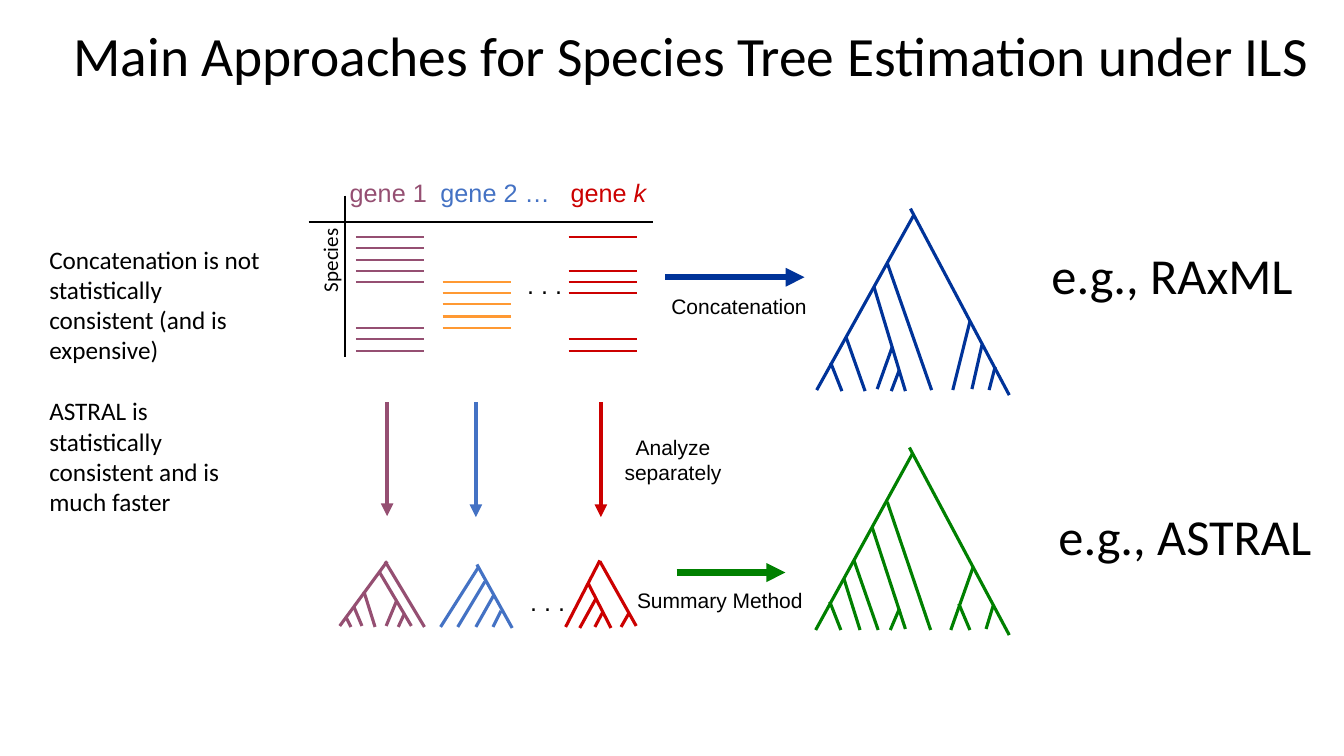
from dataclasses import dataclass

import pptx
import pptx.dml.color
import pptx.enum.shapes
import pptx.enum.text
import pptx.oxml.ns
import pptx.slide
import pptx.text.text
import pptx.util
from lxml import etree

EMU_PER_PX = 9144  # 100 px to the inch
COLORS = {
    "black": "000000",
    "purple": "954F72",
    "blue": "4472C4",
    "red": "CC0000",
    "orange": "FF9933",
    "navy": "003399",
    "green": "008000",
}
ALIGN = pptx.enum.text.PP_ALIGN
ANCHOR = pptx.enum.text.MSO_ANCHOR
Segment = tuple[int, int, int, int]


@dataclass
class Line:
    ends: Segment
    color: str
    width: float
    arrow: bool = False


@dataclass
class Tree:
    color: str
    branches: list[Segment]


@dataclass
class Alignment:
    left: int
    color: str
    rows: list[int]


@dataclass
class Label:
    box: Segment
    paragraphs: list[str]
    size: float
    font: str = "Calibri"
    align: ALIGN = ALIGN.LEFT
    anchor: ANCHOR = ANCHOR.TOP
    wrap: bool = False
    rotation: int = 0
    line_spacing: float = 1.0
    gap: int = 0


def px(length: int) -> pptx.util.Emu:
    return pptx.util.Emu(length * EMU_PER_PX)


def rgb(name: str) -> pptx.dml.color.RGBColor:
    return pptx.dml.color.RGBColor.from_string(COLORS[name])


def add_line(slide: pptx.slide.Slide, line: Line) -> None:
    straight = pptx.enum.shapes.MSO_CONNECTOR.STRAIGHT
    sp = slide.shapes.add_connector(straight, *map(px, line.ends))
    sp.line.color.rgb = rgb(line.color)
    sp.line.width = pptx.util.Pt(line.width)
    if line.arrow:
        ln = sp.line._get_or_add_ln()
        etree.SubElement(ln, pptx.oxml.ns.qn("a:tailEnd"), type="triangle")
    etree.SubElement(sp._element.spPr, pptx.oxml.ns.qn("a:effectLst"))


def add_tree(slide: pptx.slide.Slide, tree: Tree) -> None:
    for branch in tree.branches:
        add_line(slide, Line(branch, tree.color, 2.25))


def add_alignment(slide: pptx.slide.Slide, gene: Alignment) -> None:
    for row in gene.rows:
        y = round(235 + 11.25 * row)
        add_line(slide, Line((gene.left, y, gene.left + 68, y), gene.color, 1.5))


def add_label(slide: pptx.slide.Slide, label: Label) -> pptx.text.text.TextFrame:
    sp = slide.shapes.add_textbox(*map(px, label.box))
    sp.rotation = label.rotation
    tf = sp.text_frame
    tf.word_wrap = label.wrap
    tf.vertical_anchor = label.anchor
    for i, text in enumerate(label.paragraphs):
        p = tf.add_paragraph() if i else tf.paragraphs[0]
        p.text = text
        p.alignment = label.align
        p.font.name = label.font
        p.font.size = pptx.util.Pt(label.size)
        p.font.color.rgb = rgb("black")
        if label.line_spacing != 1:
            p.line_spacing = label.line_spacing
        if i and label.gap:
            p.space_before = pptx.util.Pt(label.gap)
    return tf


def add_gene_headings(slide: pptx.slide.Slide) -> None:
    tf = add_label(slide, Label((337, 171, 318, 40), [""], 18, "Arial", wrap=True))
    p = tf.paragraphs[0]
    tabs = etree.Element(pptx.oxml.ns.qn("a:tabLst"))
    for stop in (90, 219):
        etree.SubElement(tabs, pptx.oxml.ns.qn("a:tab"), pos=str(px(stop)), algn="l")
    p._p.get_or_add_pPr().insert(0, tabs)
    for text, color in (("gene 1\t", "purple"), ("gene 2 …\t", "blue"),
                        ("gene ", "red"), ("k", "red")):
        r = p.add_run()
        r.text = text
        r.font.name = "Arial"
        r.font.size = pptx.util.Pt(18)
        r.font.color.rgb = rgb(color)
        if text == "k":
            r.font.italic = True


LABELS = [
    Label((63, 11, 1315, 94), ["Main Approaches for Species Tree Estimation under ILS"],
          39.6, anchor=ANCHOR.MIDDLE, wrap=True, line_spacing=0.9),
    Label((39, 237, 231, 283),
          ["Concatenation is not statistically consistent (and is expensive)",
           "ASTRAL is statistically consistent and is much faster"],
          18, wrap=True, gap=22),
    Label((285, 240, 84, 35), ["Species"], 15, rotation=270),
    Label((513, 262, 55, 40), [". . ."], 18, "Arial"),
    Label((516, 577, 55, 40), [". . ."], 18, "Arial"),
    Label((656, 286, 156, 35), ["Concatenation"], 15, "Arial"),
    Label((609, 426, 117, 61), ["Analyze", "separately"], 15, "Arial", ALIGN.CENTER),
    Label((618, 578, 192, 35), ["Summary Method"], 15, "Arial", ALIGN.CENTER),
    Label((1033, 237, 262, 71), ["e.g., RAxML"], 36),
    Label((1040, 496, 274, 71), ["e.g., ASTRAL"], 36),
]

LINES = [
    # Axes of the alignment table
    Line((342, 194, 342, 354), "black", 1.5),
    Line((306, 220, 648, 220), "black", 1.5),
    # Steps of the two approaches
    Line((384, 399, 384, 512), "purple", 3, True),
    Line((472, 399, 472, 513), "blue", 3, True),
    Line((596, 399, 596, 513), "red", 3, True),
    Line((660, 275, 798, 275), "navy", 4.5, True),
    Line((671, 568, 779, 568), "green", 4.5, True),
]

ALIGNMENTS = [
    Alignment(353, "purple", [0, 1, 2, 3, 4, 8, 9, 10]),
    Alignment(439, "orange", [4, 5, 6, 7, 8]),
    Alignment(564, "red", [0, 3, 4, 5, 9, 10]),
]

TREES = [
    # Gene trees
    Tree("purple", [
        (384, 557, 337, 621), (382, 557, 421, 622), (376, 567, 408, 621),
        (361, 587, 372, 622), (351, 602, 359, 621), (393, 597, 383, 621),
        (401, 609, 395, 622), (348, 622, 343, 612)]),
    Tree("blue", [
        (473, 560, 508, 623), (437, 622, 475, 562), (490, 590, 472, 622),
        (489, 622, 497, 606), (481, 577, 454, 622)]),
    Tree("red", [
        (583, 578, 606, 623), (561, 622, 595, 556), (624, 608, 616, 622),
        (590, 622, 598, 607), (595, 557, 631, 621), (575, 623, 591, 594)]),
    # Species trees
    Tree("navy", [
        (906, 214, 810, 387), (903, 207, 1001, 392), (880, 261, 924, 387),
        (945, 387, 962, 319), (974, 342, 964, 386), (981, 387, 987, 364),
        (867, 285, 898, 388), (839, 334, 858, 388), (824, 360, 835, 388),
        (885, 344, 870, 386), (892, 367, 884, 388)]),
    Tree("green", [
        (905, 450, 809, 625), (902, 444, 1001, 630), (880, 498, 923, 625),
        (943, 625, 965, 563), (951, 599, 962, 625), (978, 624, 985, 601),
        (865, 523, 898, 624), (837, 574, 853, 625), (823, 597, 834, 625),
        (847, 556, 871, 625), (892, 604, 883, 625)]),
]


def main() -> None:
    prs = pptx.Presentation()
    prs.slide_width, prs.slide_height = px(1333), px(750)
    slide = prs.slides.add_slide(prs.slide_layouts[6])
    for line in LINES:
        add_line(slide, line)
    for gene in ALIGNMENTS:
        add_alignment(slide, gene)
    for tree in TREES:
        add_tree(slide, tree)
    for label in LABELS:
        add_label(slide, label)
    add_gene_headings(slide)
    prs.save("out.pptx")


if __name__ == "__main__":
    main()
